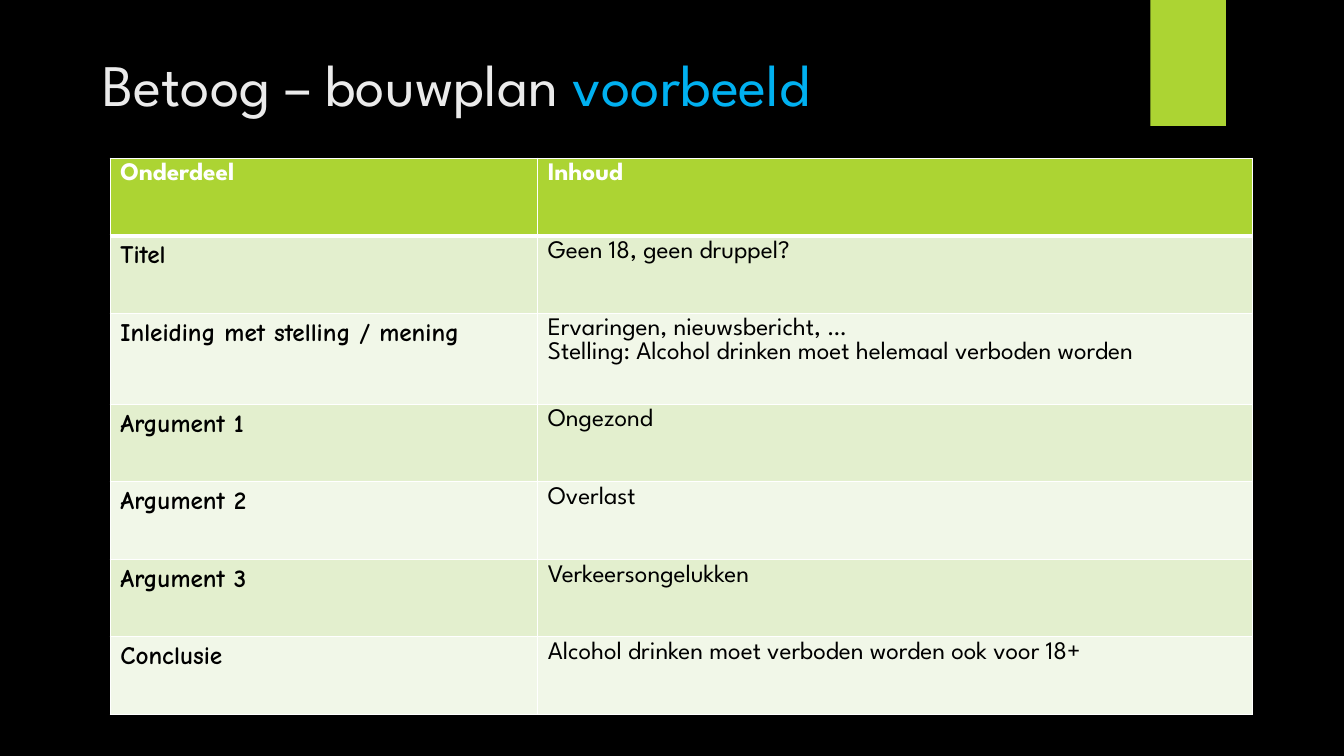
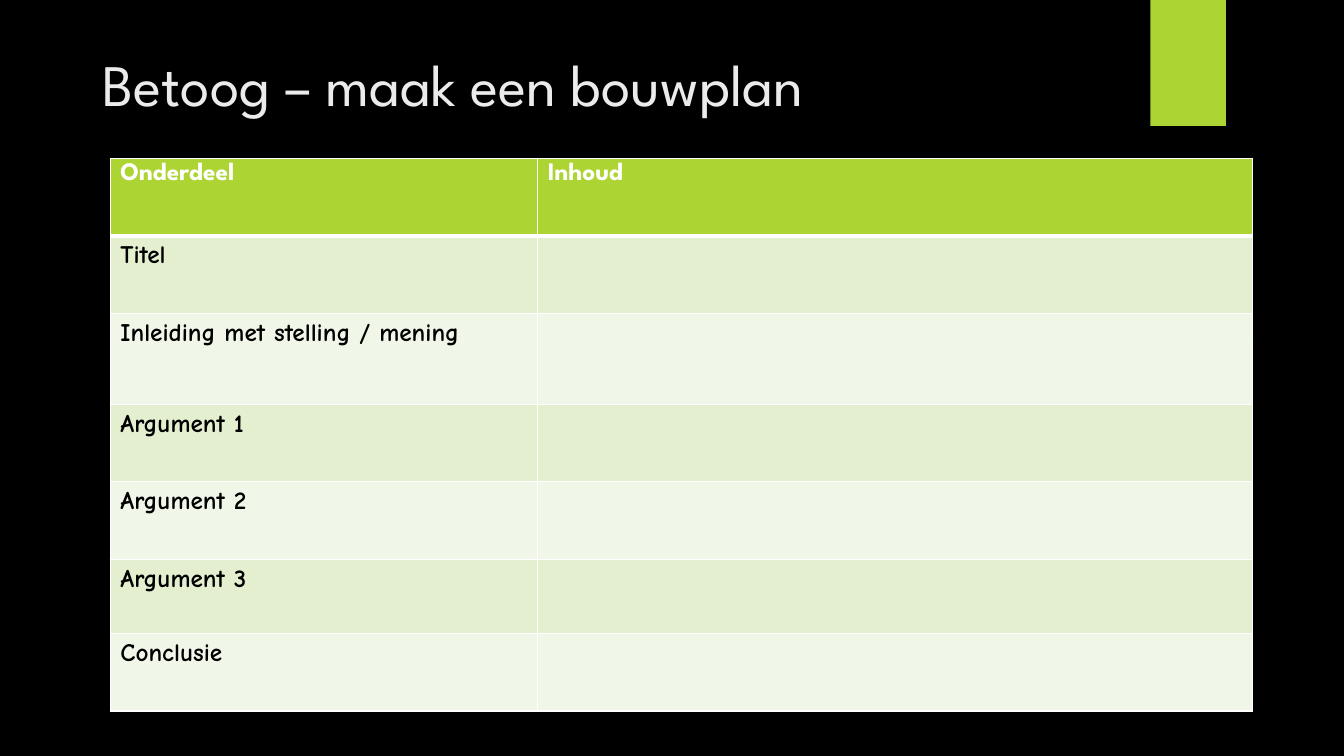
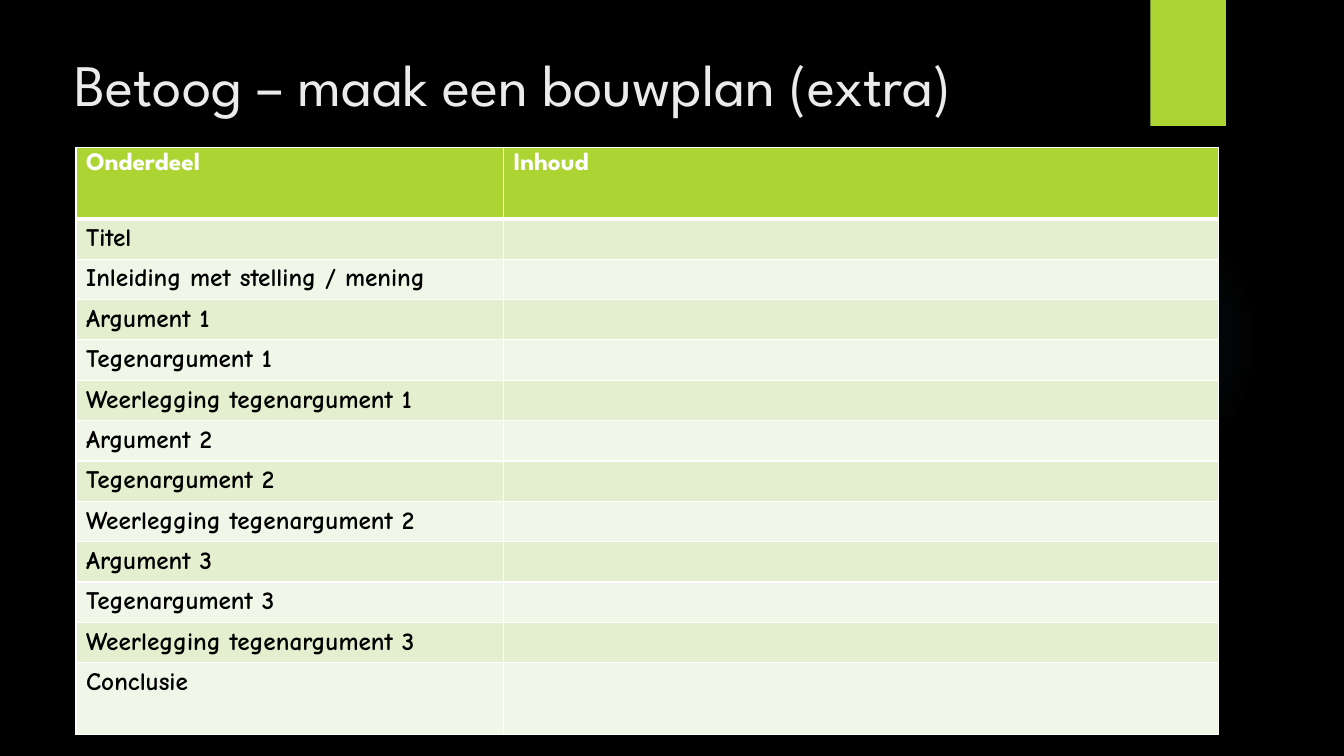
from dataclasses import dataclass

from lxml import etree
from pptx import Presentation
from pptx import oxml
from pptx.dml.color import RGBColor
from pptx.enum import shapes, text
from pptx.oxml import ns
from pptx.util import Pt

COLORS = {
    "background": "000000",
    "accent": "ACD433",
    "glow": "7AC4F0",
    "title": "EBEBEB",
    "highlight": "00B0F0",
    "header": "FFFFFF",
    "border": "FFFFFF",
    "body": "000000",
    "band_dark": "E3EFCE",
    "band_light": "F1F7E8",
}
SPARTAN = "League Spartan"
COMIC = "Comic Neue"
TITLE_SIZE = 42
CELL_SIZE = 18
COLUMN_WIDTHS = (305.3, 510.5)
HEADER = ("Onderdeel", "Inhoud")
GLOW_STOPS = ((0, 7), (36, 6), (69, 0))


@dataclass
class Plan:
    title: list[tuple[str, str]]
    title_left: float
    title_width: float
    table_left: float
    table_top: float
    rows: list[tuple[str, str]]
    heights: list[float]


def rgb(name: str) -> RGBColor:
    return RGBColor.from_string(COLORS[name])


def add_run(paragraph, words: str, font: str, size: float, color: str, bold: bool = False) -> None:
    run = paragraph.add_run()
    run.text = words
    run.font.name = font
    run.font.size = Pt(size)
    run.font.bold = bold
    run.font.color.rgb = rgb(color)


def add_plain_shape(slide, kind, left: float, top: float, width: float, height: float):
    shape = slide.shapes.add_shape(kind, Pt(left), Pt(top), Pt(width), Pt(height))
    shape.shadow.inherit = False
    shape.line.fill.background()
    return shape


def add_backdrop(slide) -> None:
    """Draw the faint round glow and the green tab at the top."""
    glow = add_plain_shape(slide, shapes.MSO_SHAPE.OVAL, 677.5, 131.8, 221.8, 221.8)
    stops = "".join(
        f'<a:gs pos="{position * 1000}"><a:srgbClr val="{COLORS["glow"]}">'
        f'<a:alpha val="{alpha * 1000}"/></a:srgbClr></a:gs>'
        for position, alpha in GLOW_STOPS
    )
    gradient = oxml.parse_xml(
        f'<a:gradFill {ns.nsdecls("a")} rotWithShape="1"><a:gsLst>{stops}</a:gsLst>'
        '<a:path path="circle"><a:fillToRect l="50000" t="50000" r="50000" b="50000"/></a:path>'
        "</a:gradFill>"
    )
    glow._element.spPr.find(ns.qn("a:prstGeom")).addnext(gradient)
    tab = add_plain_shape(slide, shapes.MSO_SHAPE.RECTANGLE, 821.7, 0, 54, 90)
    tab.fill.solid()
    tab.fill.fore_color.rgb = rgb("accent")


def add_title(slide, plan: Plan) -> None:
    title = slide.shapes.add_textbox(Pt(plan.title_left), Pt(17.3), Pt(plan.title_width), Pt(104.4))
    frame = title.text_frame
    frame.word_wrap = True
    frame.vertical_anchor = text.MSO_ANCHOR.TOP
    frame.margin_top = Pt(16.7)
    for words, color in plan.title:
        add_run(frame.paragraphs[0], words, SPARTAN, TITLE_SIZE, color)


def set_borders(cell, bottom: float) -> None:
    properties = cell._tc.get_or_add_tcPr()
    for side, width in (("L", 1), ("R", 1), ("T", 1), ("B", bottom)):
        line = etree.SubElement(properties, ns.qn(f"a:ln{side}"), w=str(Pt(width)))
        fill = etree.SubElement(line, ns.qn("a:solidFill"))
        etree.SubElement(fill, ns.qn("a:srgbClr"), val=COLORS["border"])


def fill_cell(cell, words: str, font: str, color: str, bold: bool, band: str, bottom: float) -> None:
    set_borders(cell, bottom)
    cell.fill.solid()
    cell.fill.fore_color.rgb = rgb(band)
    frame = cell.text_frame
    if not words:
        end = etree.SubElement(frame.paragraphs[0]._p, ns.qn("a:endParaRPr"), sz=str(CELL_SIZE * 100))
        etree.SubElement(end, ns.qn("a:latin"), typeface=font)
        return
    for index, line in enumerate(words.split("\n")):
        paragraph = frame.add_paragraph() if index else frame.paragraphs[0]
        add_run(paragraph, line, font, CELL_SIZE, color, bold)


def add_plan_table(slide, plan: Plan) -> None:
    rows = [HEADER, *plan.rows]
    table = slide.shapes.add_table(
        len(rows), len(COLUMN_WIDTHS), Pt(plan.table_left), Pt(plan.table_top),
        Pt(sum(COLUMN_WIDTHS)), Pt(sum(plan.heights)),
    ).table
    for column, width in zip(table.columns, COLUMN_WIDTHS):
        column.width = Pt(width)
    for row, height in zip(table.rows, plan.heights):
        row.height = Pt(height)
    for r, (part, content) in enumerate(rows):
        if r == 0:
            for c, words in enumerate(HEADER):
                fill_cell(table.cell(0, c), words, SPARTAN, "header", True, "accent", 3)
            continue
        band = "band_dark" if r % 2 else "band_light"
        fill_cell(table.cell(r, 0), part, COMIC, "body", True, band, 1)
        fill_cell(table.cell(r, 1), content, SPARTAN, "body", False, band, 1)


OPENING = ["Titel", "Inleiding met stelling / mening"]
PARTS = OPENING + [f"Argument {n}" for n in (1, 2, 3)] + ["Conclusie"]
EXTRA_PARTS = OPENING + [
    f"{step} {n}"
    for n in (1, 2, 3)
    for step in ("Argument", "Tegenargument", "Weerlegging tegenargument")
] + ["Conclusie"]
EXAMPLE = [
    "Geen 18, geen druppel?",
    "Ervaringen, nieuwsbericht, …\nStelling: Alcohol drinken moet helemaal verboden worden",
    "Ongezond",
    "Overlast",
    "Verkeersongelukken",
    "Alcohol drinken moet verboden worden ook voor 18+",
]

PLANS = [
    Plan([("Betoog – bouwplan ", "title"), ("voorbeeld", "highlight")], 66.2, 828, 78.8, 113,
         list(zip(PARTS, EXAMPLE)), [55.4, 55.4, 65, 55.4, 55.4, 55.4, 55.4]),
    Plan([("Betoog – maak een bouwplan", "title")], 66.2, 828, 78.8, 113,
         [(part, "") for part in PARTS], [55.4, 55.4, 65, 55.4, 55.4, 53, 55.4]),
    Plan([("Betoog – maak een bouwplan (extra)", "title")], 46.1, 848.2, 54.3, 105.3,
         [(part, "") for part in EXTRA_PARTS], [51, *[28] * 11, 51]),
]


def main() -> None:
    deck = Presentation()
    deck.slide_width, deck.slide_height = Pt(960), Pt(540)
    backdrop = deck.slide_master.background.fill
    backdrop.solid()
    backdrop.fore_color.rgb = rgb("background")
    for plan in PLANS:
        slide = deck.slides.add_slide(deck.slide_layouts[6])
        add_backdrop(slide)
        add_title(slide, plan)
        add_plan_table(slide, plan)
    deck.save("out.pptx")


if __name__ == "__main__":
    main()
